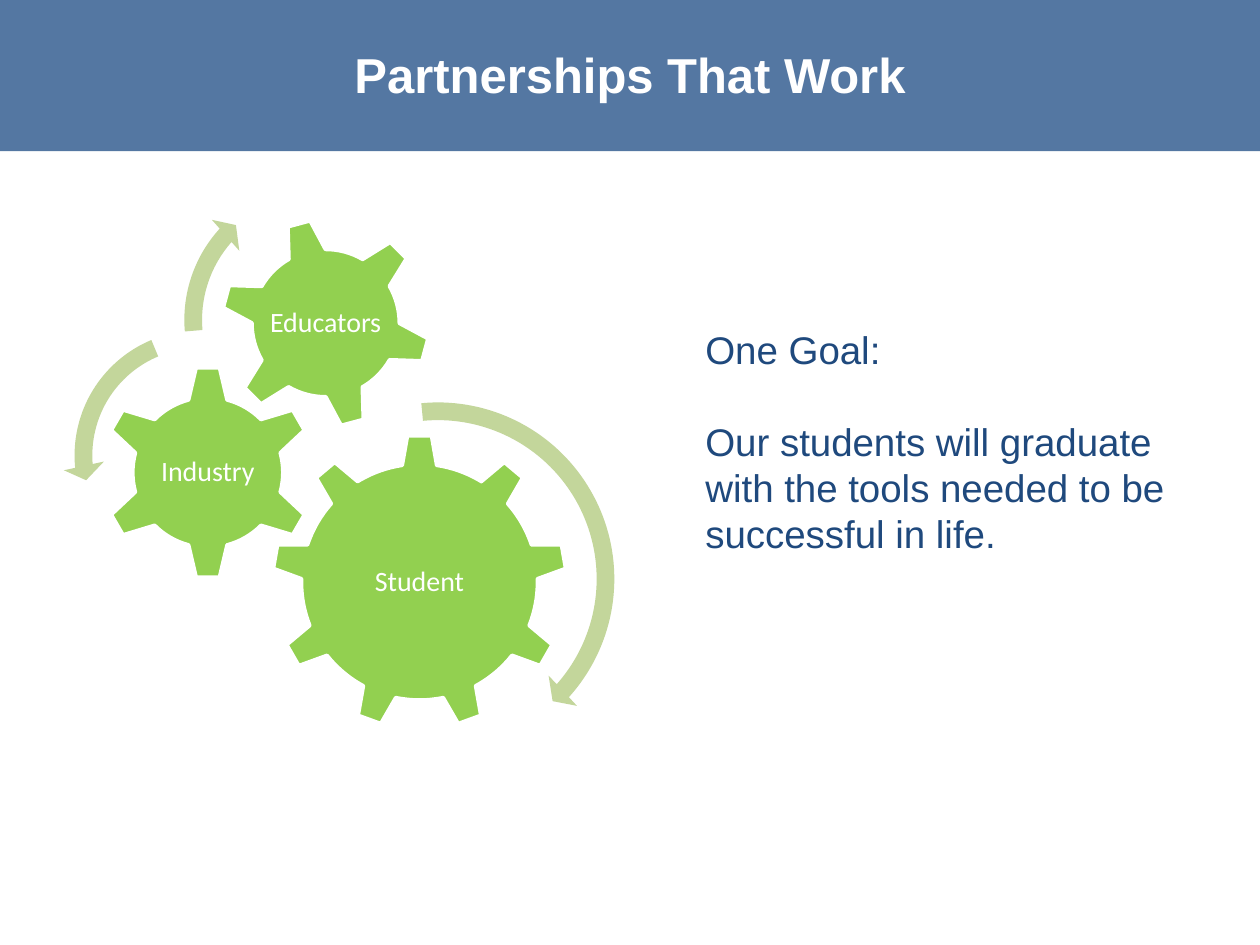
from typing import NamedTuple

from lxml import etree
from pptx import Presentation
from pptx import util as u
from pptx.dml.color import RGBColor
from pptx.enum import shapes, text
from pptx.oxml.ns import qn

WIDTH, HEIGHT = u.Inches(10), u.Inches(7.5)
WHITE = RGBColor(0xFF, 0xFF, 0xFF)
BAND_BLUE = RGBColor(0x37, 0x60, 0x92)
TEXT_BLUE = RGBColor(0x1F, 0x49, 0x7D)
GEAR_GREEN = RGBColor(0x92, 0xD0, 0x50)
ARROW_GREEN = RGBColor(0xC3, 0xD6, 0x9B)
SHAPE = shapes.MSO_SHAPE


class Gear(NamedTuple):
    """Centre and sizes are shares of the slide's width."""
    label: str
    kind: SHAPE
    x: float
    y: float
    size: float
    label_size: float
    rotation: float = 0


class Arrow(NamedTuple):
    """Left, top and size are shares of the slide's width."""
    kind: SHAPE
    x: float
    y: float
    size: float
    adjustments: tuple[float, ...]


GEARS = [
    Gear("Student", SHAPE.GEAR_9, 0.333, 0.462, 0.234, 0.14),
    Gear("Industry", SHAPE.GEAR_6, 0.165, 0.375, 0.17, 0.084),
    Gear("Educators", SHAPE.GEAR_6, 0.2585, 0.2565, 0.167, 0.094, 345),
]
ARROWS = [
    Arrow(SHAPE.CIRCULAR_ARROW, 0.198, 0.31, 0.299,
          (0.047, 2.99, 25.085, 158.779, 0.055)),
    Arrow(SHAPE.LEFT_CIRCULAR_ARROW, 0.05, 0.253, 0.217,
          (0.065, 4.3, 104.891, 148.378, 0.075)),
    Arrow(SHAPE.CIRCULAR_ARROW, 0.137, 0.137, 0.234,
          (0.06, 3.941, 133.138, 105.082, 0.07)),
]


def share(value: float) -> int:
    return round(value * WIDTH)


def write(frame, *paragraphs: str, size: float, color: RGBColor,
          font: str = "Arial", bold: bool = False, align=text.PP_ALIGN.LEFT,
          line_spacing: float = 1, gap: float = 0, inset: float | None = None) -> None:
    """Fill a frame, with gap points between its paragraphs."""
    frame.word_wrap = True
    frame.vertical_anchor = text.MSO_ANCHOR.MIDDLE
    if inset is not None:
        frame.margin_left = frame.margin_right = u.Inches(inset)
        frame.margin_top = frame.margin_bottom = u.Inches(inset)
    for index, words in enumerate(paragraphs):
        paragraph = frame.add_paragraph() if index else frame.paragraphs[0]
        paragraph.alignment = align
        paragraph.line_spacing = line_spacing
        paragraph.space_before = u.Pt(gap if index else 0)
        run = paragraph.add_run()
        run.text = words
        run.font.name, run.font.size, run.font.bold = font, u.Pt(size), bold
        run.font.color.rgb = color


def add_filled(slide, kind: SHAPE, box: tuple[int, ...], color: RGBColor):
    shape = slide.shapes.add_shape(kind, *box)
    shape.shadow.inherit = False
    shape.fill.solid()
    shape.fill.fore_color.rgb = color
    shape.line.fill.background()
    return shape


def centred_square(gear: Gear, size: float) -> tuple[int, ...]:
    return (share(gear.x - size / 2), share(gear.y - size / 2),
            share(size), share(size))


def add_gear(slide, gear: Gear) -> None:
    wheel = add_filled(slide, gear.kind, centred_square(gear, gear.size), GEAR_GREEN)
    wheel.rotation = gear.rotation
    wheel.line.color.rgb = WHITE
    wheel.line.width = u.Pt(2)
    label = slide.shapes.add_textbox(*centred_square(gear, gear.label_size))
    write(label.text_frame, gear.label, size=16, color=WHITE, font="Calibri",
          align=text.PP_ALIGN.CENTER, line_spacing=0.9, inset=0.02)


def add_arrow(slide, arrow: Arrow) -> None:
    box = (share(arrow.x), share(arrow.y), share(arrow.size), share(arrow.size))
    curve = add_filled(slide, arrow.kind, box, ARROW_GREEN)
    for index, value in enumerate(arrow.adjustments):
        curve.adjustments[index] = value


def add_header(slide) -> None:
    title = slide.shapes.title
    title.left, title.top, title.width, title.height = 0, 0, WIDTH, share(0.117)
    write(title.text_frame, "Partnerships That Work", size=28, color=WHITE,
          bold=True, align=text.PP_ALIGN.CENTER)
    band = add_filled(slide, SHAPE.RECTANGLE, (0, 0, WIDTH, share(0.12)), BAND_BLUE)
    color = band.element.spPr.find(qn("a:solidFill"))[0]
    etree.SubElement(color, qn("a:alpha"), val="85000")
    title.element.addprevious(band.element)


def main() -> None:
    deck = Presentation()
    deck.slide_width, deck.slide_height = WIDTH, HEIGHT
    slide = deck.slides.add_slide(deck.slide_layouts[5])
    add_header(slide)
    for gear in GEARS:
        add_gear(slide, gear)
    for arrow in ARROWS:
        add_arrow(slide, arrow)
    goal = slide.shapes.add_textbox(share(0.55), share(0.15), share(0.4), share(0.4))
    write(goal.text_frame, "One Goal:",
          "Our students will graduate with the tools needed to be successful in life.",
          size=22, color=TEXT_BLUE, gap=26)
    deck.save("out.pptx")


if __name__ == "__main__":
    main()
